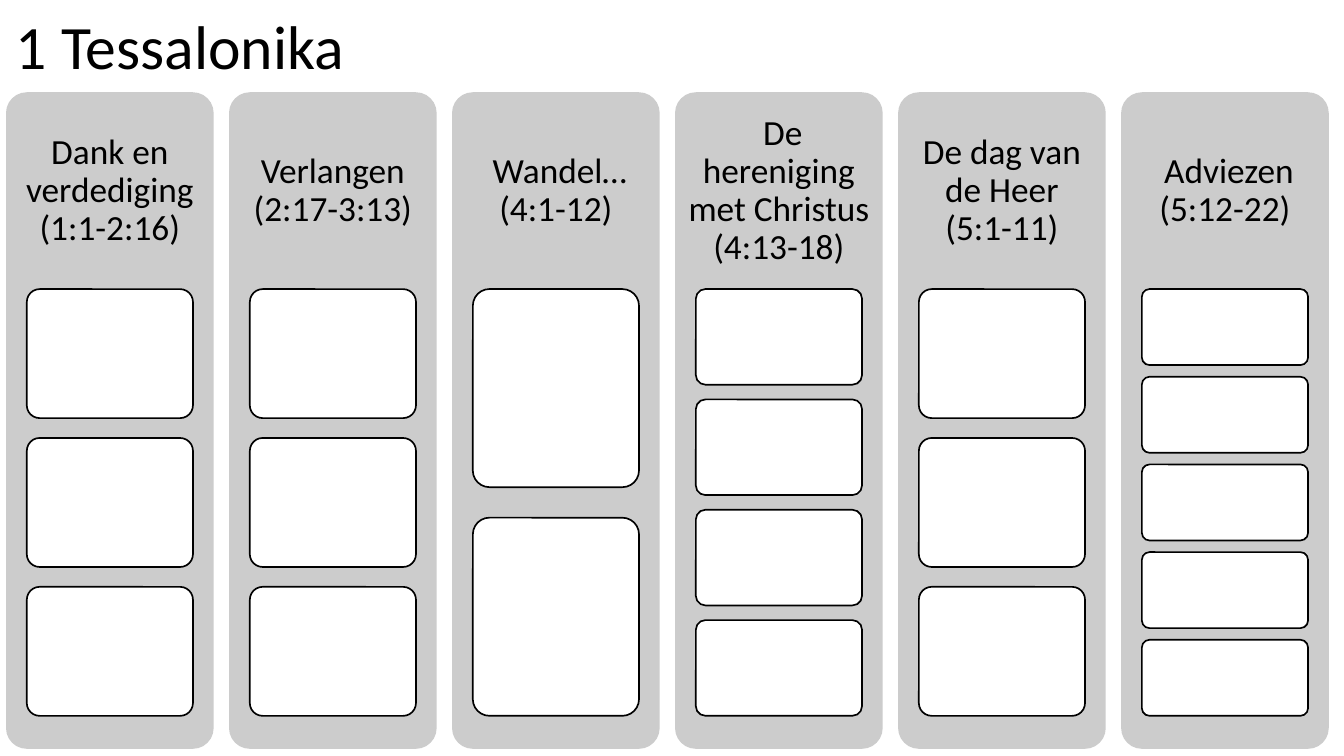
from dataclasses import dataclass

from pptx import Presentation
from pptx.dml.color import RGBColor
from pptx.enum.shapes import MSO_SHAPE
from pptx.enum.text import MSO_ANCHOR, PP_ALIGN
from pptx.util import Pt


@dataclass
class Theme:
    font: str = "Calibri"
    ink: RGBColor = RGBColor(0, 0, 0)
    column: RGBColor = RGBColor(0xCC, 0xCC, 0xCC)
    card: RGBColor = RGBColor(0xFF, 0xFF, 0xFF)
    title_size: float = 36.7
    heading_size: float = 21


theme = Theme()


def add_panel(left, top, width, height, fill):
    panel = page.shapes.add_shape(
        MSO_SHAPE.ROUNDED_RECTANGLE, Pt(left), Pt(top), Pt(width), Pt(height))
    panel.adjustments[0] = 0.1
    panel.shadow.inherit = False
    panel.fill.solid()
    panel.fill.fore_color.rgb = fill
    panel.line.fill.background()
    return panel


def add_text(left, top, width, height, text, size, align, inset):
    box = page.shapes.add_textbox(Pt(left), Pt(top), Pt(width), Pt(height))
    frame = box.text_frame
    frame.word_wrap = True
    frame.vertical_anchor = MSO_ANCHOR.MIDDLE
    frame.margin_left = frame.margin_right = Pt(inset)
    frame.text = text
    para = frame.paragraphs[0]
    para.alignment = align
    para.line_spacing = 0.9
    for span in para.runs:
        span.font.name = theme.font
        span.font.size = Pt(size)
        span.font.color.rgb = theme.ink


deck = Presentation()
deck.slide_width = Pt(800)
deck.slide_height = Pt(450)
page = deck.slides.add_slide(deck.slide_layouts[6])

sections = [
    ("Dank en verdediging (1:1-2:16)", 3),
    ("Verlangen (2:17-3:13)", 3),
    (" Wandel… (4:1-12)", 2),
    (" De hereniging met Christus (4:13-18)", 4),
    ("De dag van de Heer (5:1-11)", 3),
    (" Adviezen (5:12-22)", 5),
]

column_left, column_top = 3.6, 54.9
column_width, column_height = 123.6, 390.8
column_pitch = 132.75
heading_height = 117.2
card_width = 98.9
card_indent = (column_width - card_width) / 2
stack_top = column_top + heading_height
stack_height = 254
gap_ratio = 2 / 13

for index, (heading, card_count) in enumerate(sections):
    left = column_left + index * column_pitch
    add_panel(left, column_top, column_width, column_height, theme.column)
    add_text(left, column_top, column_width, heading_height, heading,
             theme.heading_size, PP_ALIGN.CENTER, 6.3)

    card_height = stack_height / (card_count + (card_count - 1) * gap_ratio)
    card_pitch = card_height * (1 + gap_ratio)
    for row in range(card_count):
        card = add_panel(left + card_indent, stack_top + row * card_pitch,
                         card_width, card_height, theme.card)
        card.line.color.rgb = theme.ink
        card.line.width = Pt(1)

add_text(2.4, 3.6, 690, 51.2, "1 Tessalonika",
         theme.title_size, PP_ALIGN.LEFT, 7.2)

deck.save("out.pptx")
